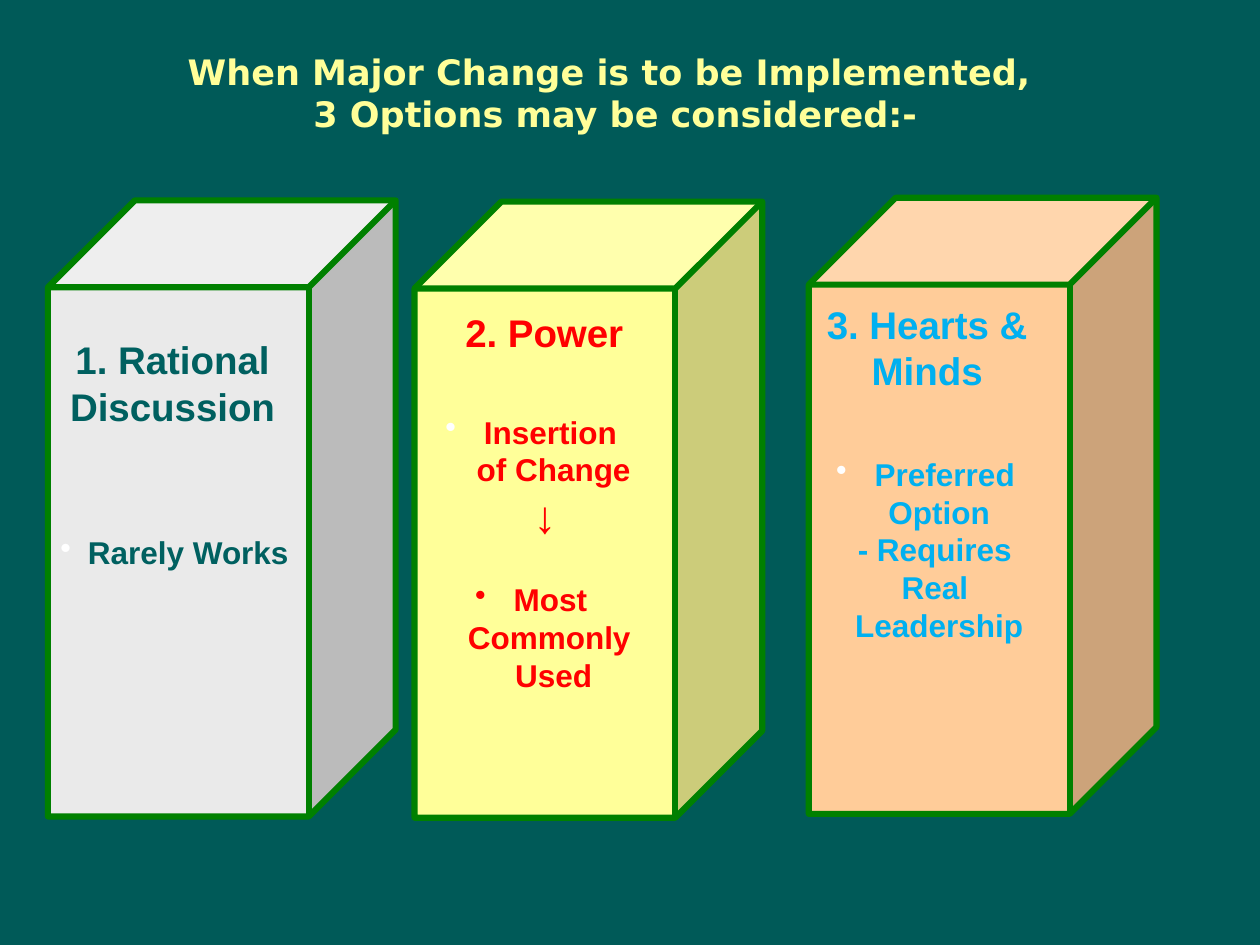
from dataclasses import dataclass

from lxml.etree import SubElement
from pptx import Presentation
from pptx.dml.color import RGBColor
from pptx.enum.shapes import MSO_SHAPE
from pptx.enum.text import MSO_ANCHOR, PP_ALIGN
from pptx.oxml.ns import qn
from pptx.util import Pt


@dataclass(frozen=True)
class Theme:
    background: str = "005A58"
    title: str = "FFFF99"
    outline: str = "008000"
    white: str = "FFFFFF"
    teal: str = "006060"
    red: str = "FF0000"
    blue: str = "00B0F0"
    grey_face: str = "EAEAEA"
    yellow_face: str = "FFFF99"
    peach_face: str = "FFCC99"
    title_font: str = "DejaVu Sans"
    body_font: str = "Arial"
    title_size: float = 20
    heading_size: float = 22
    body_size: float = 18
    arrow_size: float = 26
    outline_width: float = 3.5


THEME = Theme()


@dataclass(frozen=True)
class Line:
    text: str
    bullet: str = ""  # bullet colour, empty for no bullet
    size: float = THEME.body_size
    indent: float = 0
    before: float = 0


@dataclass(frozen=True)
class Option:
    box: tuple  # left, top, width, height of the cube
    heading: str
    heading_offset: tuple  # from the cube's top left corner
    heading_height: float
    face: str
    color: str
    lines: tuple


CUBE_SIZE = (198.7, 352.1)
HEADING_WIDTH = 141.1

OPTIONS = (
    Option((27.4, 114.5, *CUBE_SIZE), "1. Rational Discussion", (0.7, 74.2), 59.8,
           THEME.grey_face, THEME.teal,
           (Line(" Rarely Works", THEME.white),)),
    Option((236.9, 115.2, *CUBE_SIZE), "2. Power", (3.6, 57.6), 33.8,
           THEME.yellow_face, THEME.red,
           (Line(" Insertion ", THEME.white),
            Line("of Change", indent=10),
            Line("↓", size=THEME.arrow_size),
            Line(" Most ", THEME.red, before=21.5),
            Line("Commonly ", indent=10),
            Line("Used", indent=10))),
    Option((462.2, 113, *CUBE_SIZE), "3. Hearts & Minds", (-2.9, 55.4), 59.8,
           THEME.peach_face, THEME.blue,
           (Line(" Preferred ", THEME.white),
            Line("Option"),
            Line("- Requires "),
            Line("Real "),
            Line("Leadership"))),
)


def rgb(color):
    return RGBColor.from_string(color)


def format_paragraph(paragraph, size, color, font_name=THEME.body_font):
    paragraph.alignment = PP_ALIGN.CENTER
    for run in paragraph.runs:
        run.font.name = font_name
        run.font.size = Pt(size)
        run.font.bold = True
        run.font.color.rgb = rgb(color)


def add_bullet(paragraph, color):
    properties = paragraph._p.get_or_add_pPr()
    bullet_color = SubElement(properties, qn("a:buClr"))
    SubElement(bullet_color, qn("a:srgbClr"), val=color)
    SubElement(properties, qn("a:buChar"), char="•")


def add_label(slide, box, text, size, color, font_name=THEME.body_font,
              anchor=MSO_ANCHOR.TOP):
    text_frame = slide.shapes.add_textbox(*map(Pt, box)).text_frame
    text_frame.word_wrap = True
    text_frame.vertical_anchor = anchor
    text_frame.text = text
    format_paragraph(text_frame.paragraphs[0], size, color, font_name)


def add_title(slide, box):
    add_label(slide, box,
              "When Major Change is to be Implemented, \v3 Options may be considered:-",
              THEME.title_size, THEME.title, THEME.title_font, MSO_ANCHOR.MIDDLE)


def add_option(slide, option):
    # Cube
    cube = slide.shapes.add_shape(MSO_SHAPE.CUBE, *map(Pt, option.box))
    cube.shadow.inherit = False
    cube.fill.solid()
    cube.fill.fore_color.rgb = rgb(option.face)
    cube.line.color.rgb = rgb(THEME.outline)
    cube.line.width = Pt(THEME.outline_width)

    # Text on the front face
    text_frame = cube.text_frame
    text_frame.word_wrap = False
    text_frame.vertical_anchor = MSO_ANCHOR.MIDDLE
    text_frame.text = "\n".join(line.text for line in option.lines)
    for paragraph, line in zip(text_frame.paragraphs, option.lines):
        if line.indent:
            paragraph._p.get_or_add_pPr().set("marL", str(Pt(line.indent)))
        if line.before:
            paragraph.space_before = Pt(line.before)
        if line.bullet:
            add_bullet(paragraph, line.bullet)
        format_paragraph(paragraph, line.size, option.color)

    # Heading
    left, top = option.box[:2]
    offset_x, offset_y = option.heading_offset
    add_label(slide, (left + offset_x, top + offset_y, HEADING_WIDTH, option.heading_height),
              option.heading, THEME.heading_size, option.color)


def main():
    presentation = Presentation()
    presentation.slide_width, presentation.slide_height = Pt(720), Pt(540)
    slide = presentation.slides.add_slide(presentation.slide_layouts[6])
    slide.background.fill.solid()
    slide.background.fill.fore_color.rgb = rgb(THEME.background)

    add_title(slide, (10, 21.6, 683.3, 62.6))
    for option in OPTIONS:
        add_option(slide, option)
    presentation.save("out.pptx")


if __name__ == "__main__":
    main()
